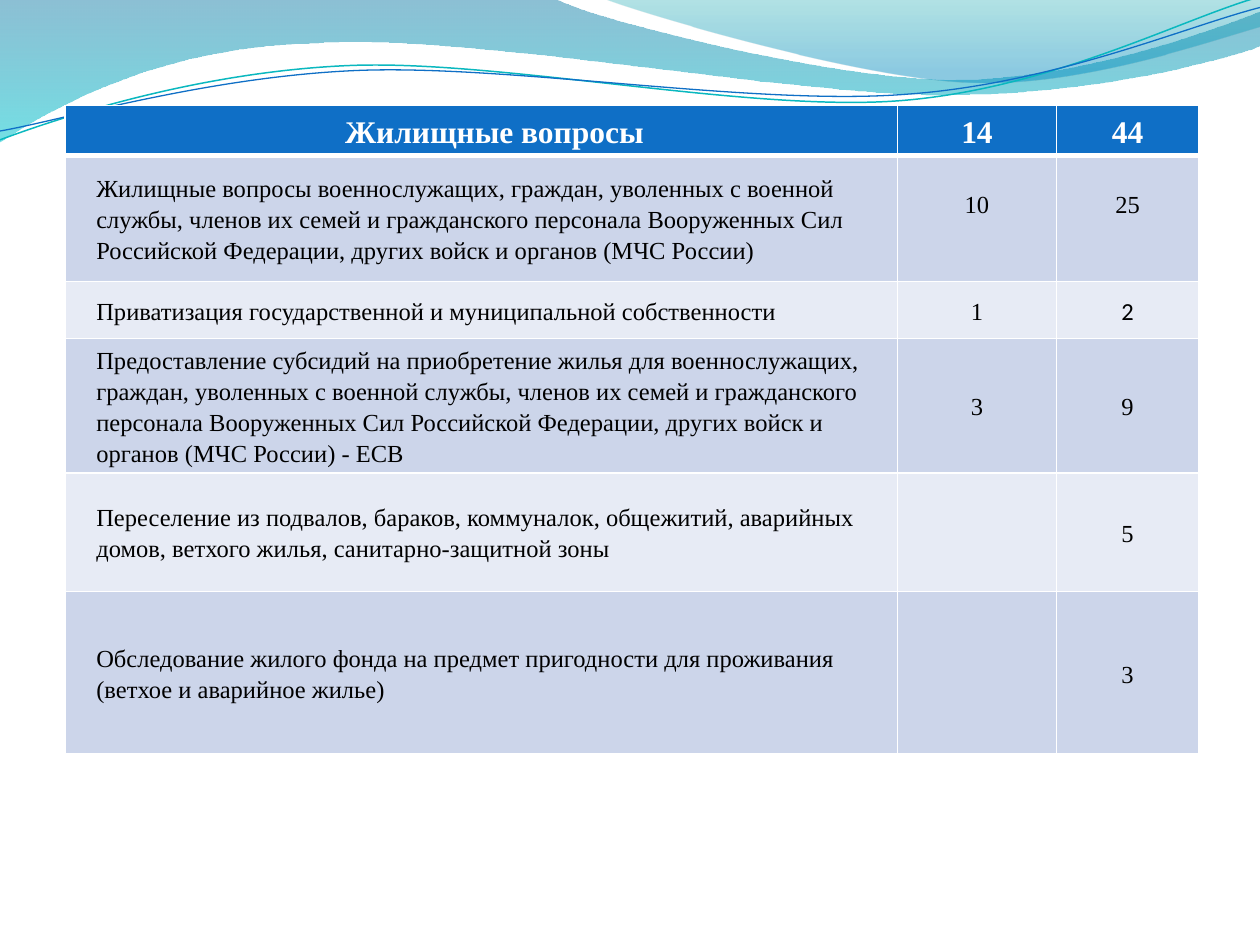
import math
from lxml import etree
from pptx import Presentation
from pptx import util as u
from pptx.dml import color
from pptx.enum import text
from pptx.oxml import ns

WIDE, HIGH = u.Inches(10), u.Inches(7.5)
SERIF = "Times New Roman"
TILT = -2.7
COLS = [6.61, 1.26, 1.13]
ROWS = [0.37, 1, 0.45, 0.96, 0.94, 1.29]
DATA = [
    ("Жилищные вопросы", "14", "44"),
    ("Жилищные вопросы военнослужащих, граждан, уволенных с военной службы, "
     "членов их семей и гражданского персонала Вооруженных Сил Российской "
     "Федерации, других войск и органов (МЧС России)", "10", "25"),
    ("Приватизация государственной и муниципальной собственности", "1", "2"),
    ("Предоставление субсидий на приобретение жилья для военнослужащих, "
     "граждан, уволенных с военной службы, членов их семей и гражданского "
     "персонала Вооруженных Сил Российской Федерации, других войск и "
     "органов (МЧС России) - ЕСВ", "3", "9"),
    ("Переселение из подвалов, бараков, коммуналок, общежитий, аварийных "
     "домов, ветхого жилья, санитарно-защитной зоны", "", "5"),
    ("Обследование жилого фонда на предмет пригодности для проживания "
     "(ветхое и аварийное жилье)", "", "3"),
]
BANDS = [
    ([(0, 0), (4.4, -0.01), (4.76, 0.17, 6.64, 0.63, 7.58, 0.63),
      (8.53, 0.63, 9.58, 0.26, 10, 0.09), (10.01, 0.36),
      (9.83, 0.44, 8.7, 0.76, 7.46, 0.75), (6.22, 0.75, 3.82, 0.28, 2.57, 0.34),
      (1.29, 0.36, 0.46, 0.83, -0.01, 1.13), (0, 0)],
     [(0, "0074A1", 45), (1, "00C6CF", 55)]),
    ([(4.79, -0.01), (5.09, 0.11, 6.82, 0.62, 7.69, 0.65),
      (8.56, 0.69, 9.61, 0.32, 10, 0.21), (10, 0), (4.79, -0.01)],
     [(0, "00A1A9", 30), (0.8, "008BBF", 45)]),
]
LINES = [
    ([(0, 1.11), (0.48, 0.93, 1.58, 0.57, 2.77, 0.52),
      (3.95, 0.47, 5.93, 0.89, 7.13, 0.8), (8.33, 0.71, 9.38, 0.15, 9.98, -0.02)],
     (4.99, 0.58), "0AB8BF", 0.85),
    ([(0, 1.04), (0.47, 0.96, 1.64, 0.61, 2.83, 0.56),
      (4.03, 0.51, 5.97, 0.84, 7.17, 0.75), (8.36, 0.67, 9.41, 0.21, 10, 0.06)],
     (5, 0.59), "0F6FC6", 0.75),
]


def hue(code):
    """Turn a hex string into a colour."""
    return color.RGBColor.from_string(code)


def put(item, form):
    """Set each attribute named in a dict of format values."""
    for name, value in form.items():
        setattr(item, name, value)


def spin(step, mid, angle):
    """Turn the points of one step about a middle point."""
    cos, sin = math.cos(math.radians(angle)), math.sin(math.radians(angle))
    turned = []
    for x, y in zip(step[::2], step[1::2]):
        dx, dy = x - mid[0], y - mid[1]
        turned += [mid[0] + dx * cos - dy * sin, mid[1] + dx * sin + dy * cos]
    return tuple(turned)


def bend(shape, path):
    """Join each three points of a curved step into one cubic curve."""
    legs = list(shape.element.iter(ns.qn("a:lnTo")))
    for step in path[1:]:
        count = len(step) // 2
        group, legs = legs[:count], legs[count:]
        if count == 3:
            curve = etree.Element(ns.qn("a:cubicBezTo"))
            group[0].addprevious(curve)
            for leg in group:
                curve.append(leg[0])
                leg.getparent().remove(leg)


def draw(slide, box, path, close):
    """Add one outline on a grid of ten columns across the box."""
    left, top, width = box
    unit = width / 10
    spots = [(left + x * unit, top + y * unit)
             for step in path for x, y in zip(step[::2], step[1::2])]
    pen = slide.shapes.build_freeform(*spots[0], scale=1.0)
    pen.add_line_segments(spots[1:], close=close)
    shape = pen.convert_to_shape()
    shape.shadow.inherit = False
    bend(shape, path)
    return shape


def waves(slide, box):
    """Place the tinted bands and the thin lines along the top."""
    for path, stops in BANDS:
        band = draw(slide, box, path, True)
        band.line.fill.background()
        band.fill.gradient()
        band.fill.gradient_angle = 270
        for stop, (place, code, clear) in zip(band.fill.gradient_stops, stops):
            stop.position = place
            stop.color.rgb = hue(code)
        tints = band.element.spPr.iter(ns.qn("a:srgbClr"))
        for tint, (place, code, clear) in zip(tints, stops):
            etree.SubElement(tint, ns.qn("a:alpha"), val=str(clear * 1000))
    for path, mid, code, width in LINES:
        flat = [spin(step, mid, -TILT) for step in path]
        curve = draw(slide, box, flat, False)
        curve.rotation = TILT
        curve.fill.background()
        put(curve.line, {"width": u.Pt(width)})
        curve.line.color.rgb = hue(code)


def edge(cell):
    """Give a header cell white borders with a thick one below."""
    props = cell._tc.get_or_add_tcPr()
    for side in "LRTB":
        width = u.Pt(3 if side == "B" else 1)
        line = etree.SubElement(props, ns.qn("a:ln" + side), w=str(width))
        fill = etree.SubElement(line, ns.qn("a:solidFill"))
        etree.SubElement(fill, ns.qn("a:srgbClr"), val="FFFFFF")


def dress(cell, words, row, col):
    """Fill and format one table cell by its row and column."""
    head = row == 0
    if head:
        edge(cell)
    cell.fill.solid()
    cell.fill.fore_color.rgb = hue("0F6FC6" if head else ("E7EBF5", "CCD5EA")[row % 2])
    low = 0.29 if row == 1 and col else 0.04
    put(cell, {"vertical_anchor": text.MSO_ANCHOR.MIDDLE,
               "margin_left": u.Inches(0.04 if col else 0.25),
               "margin_right": u.Inches(0.04),
               "margin_top": u.Inches(0.04),
               "margin_bottom": u.Inches(low)})
    if not words:
        return
    para = cell.text_frame.paragraphs[0]
    align = text.PP_ALIGN.CENTER if head or col else text.PP_ALIGN.LEFT
    put(para, {"alignment": align, "line_spacing": 1.15})
    run = para.add_run()
    run.text = words
    put(run.font, {"size": u.Pt(18 if head else 14), "bold": head,
                   "name": "Calibri" if (row, col) == (2, 2) else SERIF})
    run.font.color.rgb = hue("FFFFFF" if head else "000000")


def grid(slide, box):
    """Place the table of housing matters, shared out over the box."""
    left, top, width, height = (int(v) for v in box)
    table = slide.shapes.add_table(len(ROWS), len(COLS), left, top, width, height).table
    for col, share in zip(table.columns, COLS):
        col.width = int(width * share / sum(COLS))
    for row, share in zip(table.rows, ROWS):
        row.height = int(height * share / sum(ROWS))
    for r, line in enumerate(DATA):
        for c, words in enumerate(line):
            dress(table.cell(r, c), words, r, c)


def main():
    """Build the slide and save it."""
    deck = Presentation()
    put(deck, {"slide_width": WIDE, "slide_height": HIGH})
    slide = deck.slides.add_slide(deck.slide_layouts[6])
    waves(slide, (0, 0, WIDE))
    col, row = WIDE / 100, HIGH / 100
    grid(slide, (5.14 * col, 11.14 * row, 90 * col, 66.9 * row))
    deck.save("out.pptx")


if __name__ == "__main__":
    main()
